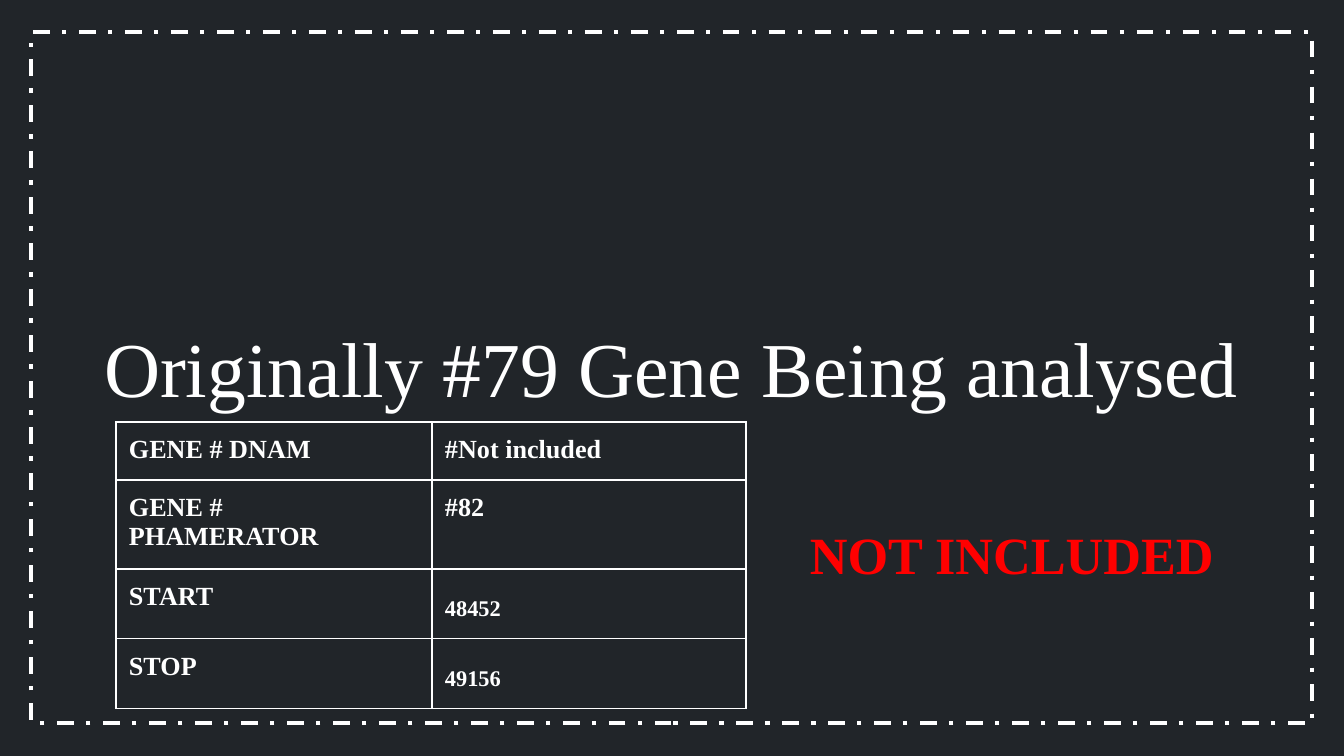
from dataclasses import dataclass

from pptx import Presentation
from pptx.dml.color import RGBColor as Color
from pptx.enum.dml import MSO_LINE as Dash
from pptx.enum.shapes import MSO_SHAPE as Shape
from pptx.enum.text import MSO_ANCHOR as Anchor, PP_ALIGN as Align
from pptx.oxml import parse_xml
from pptx.oxml.ns import nsdecls
from pptx.util import Emu, Pt

EMU_PER_PX = 914400 / 134.4


@dataclass(frozen=True)
class Theme:
    font: str = "Times New Roman"
    background: str = "212529"
    light: str = "FFFFFF"
    alert: str = "FF0000"
    title_size: float = 41.6
    alert_size: float = 28
    label_size: float = 14
    position_size: float = 12
    frame_width: float = 2.25
    grid_width: float = 0.75


THEME = Theme()
INSET = 13
GENE_ROWS = [
    (58, "GENE # DNAM", "#Not included"),
    (89, "GENE # PHAMERATOR", "#82"),
    (70, "START", "48452"),
    (70, "STOP", "49156"),
]


def px(length):
    return Emu(round(length * EMU_PER_PX))


def style_text(para, size, color, bold):
    for span in para.runs:
        font = span.font
        font.name = THEME.font
        font.size = Pt(size)
        font.bold = bold
        font.color.rgb = Color.from_string(color)


def add_frame(page, left, top, width, height):
    frame = page.shapes.add_shape(Shape.RECTANGLE, px(left), px(top), px(width), px(height))
    frame.shadow.inherit = False
    frame.fill.background()
    frame.line.color.rgb = Color.from_string(THEME.light)
    frame.line.width = Pt(THEME.frame_width)
    frame.line.dash_style = Dash.DASH_DOT


def add_text(page, bounds, text, size, color, bold=False, top_inset=INSET):
    box = page.shapes.add_textbox(*map(px, bounds))
    frame = box.text_frame
    frame.word_wrap = True
    frame.margin_left = frame.margin_right = frame.margin_bottom = px(INSET)
    frame.margin_top = px(top_inset)
    frame.text = text
    para = frame.paragraphs[0]
    style_text(para, size, color, bold)
    return para


def add_borders(cell):
    properties = cell._tc.get_or_add_tcPr()
    for side in ("lnL", "lnR", "lnT", "lnB"):
        properties.append(parse_xml(
            f'<a:{side} {nsdecls("a")} w="{Pt(THEME.grid_width)}"><a:solidFill>'
            f'<a:srgbClr val="{THEME.light}"/></a:solidFill></a:{side}>'
        ))


def fill_cell(cell, text):
    cell.margin_left = cell.margin_right = px(INSET)
    cell.margin_top = cell.margin_bottom = px(INSET)
    cell.vertical_anchor = Anchor.TOP
    add_borders(cell)
    cell.fill.background()
    cell.text_frame.text = text
    para = cell.text_frame.paragraphs[0]
    is_position = text.isdigit()
    if is_position:
        para.line_spacing = 1.6
        para.space_after = Pt(5)
    size = THEME.position_size if is_position else THEME.label_size
    style_text(para, size, THEME.light, True)


def add_gene_table(page, left, top, widths, rows):
    height = sum(row[0] for row in rows)
    table = page.shapes.add_table(
        len(rows), len(widths), px(left), px(top), px(sum(widths)), px(height)
    ).table
    table.first_row = table.horz_banding = False
    for column, width in zip(table.columns, widths):
        column.width = px(width)
    for row, (row_height, *texts) in zip(table.rows, rows):
        row.height = px(row_height)
        for cell, text in zip(row.cells, texts):
            fill_cell(cell, text)


def main():
    deck = Presentation()
    deck.slide_width, deck.slide_height = px(1344), px(756)
    page = deck.slides.add_slide(deck.slide_layouts[6])
    page.background.fill.solid()
    page.background.fill.fore_color.rgb = Color.from_string(THEME.background)

    add_frame(page, 31, 32, 1281, 691)
    title = add_text(page, (55, 284, 1253, 188), "Originally #79 Gene Being analysed ",
                     THEME.title_size, THEME.light, top_inset=22)
    title.alignment = Align.CENTER
    title.line_spacing = 1.15
    title.space_after = Pt(12)
    add_text(page, (797, 509, 434, 90), "NOT INCLUDED", THEME.alert_size, THEME.alert, bold=True)
    add_gene_table(page, 116, 422, (316, 314), GENE_ROWS)

    deck.save("out.pptx")


if __name__ == "__main__":
    main()
